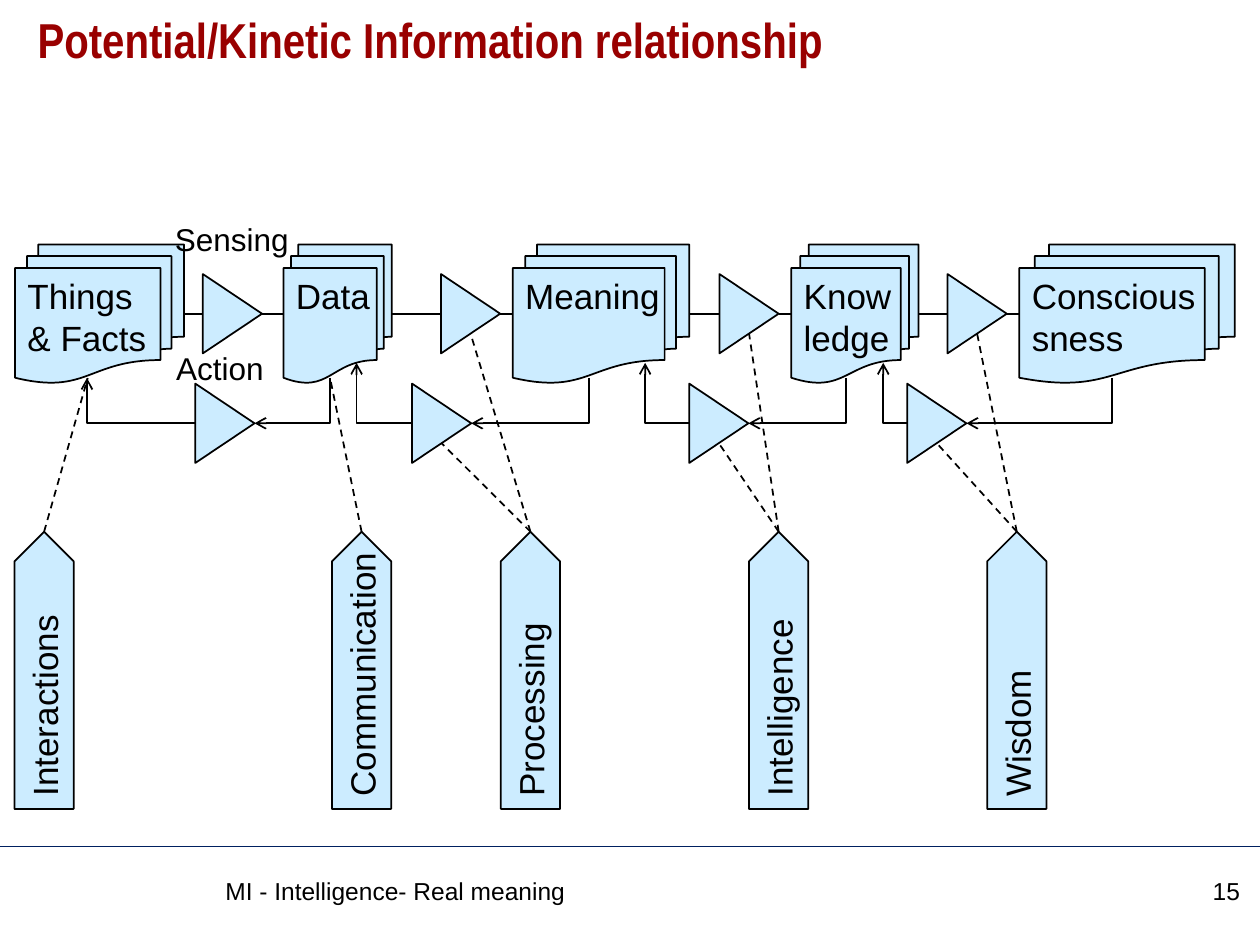
from lxml.etree import SubElement
from pptx import Presentation
from pptx.dml.color import RGBColor
from pptx.enum.dml import MSO_LINE
from pptx.enum.shapes import MSO_CONNECTOR as Connector, MSO_SHAPE as Shape
from pptx.enum.text import MSO_ANCHOR as Anchor, MSO_AUTO_SIZE as AutoSize, PP_ALIGN as Align
from pptx.oxml.ns import qn
from pptx.util import Inches, Pt

BLACK = RGBColor(0x00, 0x00, 0x00)
PALE_BLUE = RGBColor(0xCC, 0xEC, 0xFF)
DARK_RED = RGBColor(0x99, 0x00, 0x00)
NAVY = RGBColor(0x00, 0x20, 0x60)

LABEL = {"name": "Arial", "size": Pt(20), "bold": False}
CAPTION = {"name": "Arial", "size": Pt(18), "bold": False}
FOOTER = {"name": "Arial", "size": Pt(14), "bold": False}
TITLE = {"name": "Arial Narrow", "size": Pt(28), "bold": True}

# Text, left, width
STAGES = [
    ("Things\n& Facts", 0.12, 1.34),
    ("Data", 2.25, 0.86),
    ("Meaning", 4.07, 1.4),
    ("Know\nledge", 6.28, 1.01),
    ("Conscious\nsness", 8.09, 1.71),
]
STAGE_TOP, STAGE_HEIGHT = 1.94, 1.1
STAGE_FOOT = 3.0
FOOT_SHARE = 0.43  # where the wavy foot is met, as a share of the width

# Left of the forward gate, left of the return gate, end point of the return arrow
STEPS = [
    (1.61, 1.55, (0.69, STAGE_FOOT)),
    (3.5, 3.27, (2.83, 2.88)),
    (5.71, 5.47, (5.12, 2.88)),
    (7.52, 7.2, (7.01, 2.88)),
]
GATE_WIDTH, GATE_HEIGHT = 0.47, 0.63
FORWARD_Y, RETURN_Y = 2.49, 3.36

# Text, x of the tip
PLATES = [
    ("Interactions", 0.35),
    ("Communication", 2.87),
    ("Processing", 4.21),
    ("Intelligence", 6.18),
    ("Wisdom", 8.07),
]
PLATE_TOP, PLATE_LENGTH, PLATE_WIDTH = 4.22, 2.2, 0.47


def write(frame, text, style, color=BLACK, align=Align.LEFT, spacing=None):
    for index, line in enumerate(text.split("\n")):
        para = frame.paragraphs[0] if index == 0 else frame.add_paragraph()
        para.alignment = align
        if spacing:
            para.line_spacing = spacing
        span = para.add_run()
        span.text = line
        for key, value in style.items():
            setattr(span.font, key, value)
        span.font.color.rgb = color


def add_text(page, text, left, top, width, height, style, wrap=True, **options):
    box = page.shapes.add_textbox(Inches(left), Inches(top), Inches(width), Inches(height))
    box.text_frame.word_wrap = wrap
    box.text_frame.auto_size = AutoSize.NONE if wrap else AutoSize.SHAPE_TO_FIT_TEXT
    write(box.text_frame, text, style, **options)


def add_block(page, kind, left, top, width, height, text="", anchor=Anchor.TOP, rotation=0):
    block = page.shapes.add_shape(kind, Inches(left), Inches(top), Inches(width), Inches(height))
    block.shadow.inherit = False
    block.fill.solid()
    block.fill.fore_color.rgb = PALE_BLUE
    block.line.color.rgb = BLACK
    block.line.width = Pt(1)
    block.rotation = rotation
    if text:
        block.text_frame.word_wrap = False
        block.text_frame.vertical_anchor = anchor
        write(block.text_frame, text, LABEL)


def add_turned(page, kind, center_x, center_y, length, breadth, rotation, text=""):
    """Add a block turned a quarter about its centre."""
    add_block(page, kind, center_x - length / 2, center_y - breadth / 2, length, breadth,
              text, Anchor.MIDDLE, rotation)


def add_gate(page, left, center_y):
    add_turned(page, Shape.ISOSCELES_TRIANGLE, left + GATE_WIDTH / 2, center_y,
               GATE_HEIGHT, GATE_WIDTH, 90)


def add_line(page, start, end, color=BLACK, width=1, dashed=False, kind=Connector.STRAIGHT):
    line = page.shapes.add_connector(kind, *(Inches(value) for value in (*start, *end)))
    line.line.color.rgb = color
    line.line.width = Pt(width)
    if dashed:
        line.line.dash_style = MSO_LINE.DASH
    SubElement(line._element.spPr, qn("a:effectLst"))
    return line


def add_bent_arrow(page, start, end, down_first):
    """Add a one-corner arrow leading left, either down then left or left then up."""
    width, height = abs(start[0] - end[0]), abs(start[1] - end[1])
    center_x, center_y = (start[0] + end[0]) / 2, (start[1] + end[1]) / 2
    if down_first:
        width, height = height, width
    arrow = add_line(page, (center_x - width / 2, center_y - height / 2),
                     (center_x + width / 2, center_y + height / 2), kind=Connector.ELBOW)
    properties = arrow._element.spPr
    properties.find(qn("a:prstGeom")).set("prst", "bentConnector2")
    properties.find(qn("a:xfrm")).set("rot", str((90 if down_first else 180) * 60000))
    SubElement(properties.find(qn("a:ln")), qn("a:tailEnd"), type="arrow")


def add_step(page, index):
    """Add the gates and the lines that lead from one stage to the next and back."""
    forward, back, head = STEPS[index]
    _, left, width = STAGES[index]
    _, next_left, next_width = STAGES[index + 1]
    add_gate(page, forward, FORWARD_Y)
    add_gate(page, back, RETURN_Y)
    add_line(page, (left + width, FORWARD_Y), (forward, FORWARD_Y))
    add_line(page, (forward + GATE_WIDTH, FORWARD_Y), (next_left, FORWARD_Y))
    add_bent_arrow(page, (next_left + next_width * FOOT_SHARE, STAGE_FOOT),
                   (back + GATE_WIDTH, RETURN_Y), down_first=True)
    add_bent_arrow(page, (back, RETURN_Y), head, down_first=False)


def add_dashes(page, index):
    """Tie a plate to its stage (first two) or to the edges of its two gates."""
    tip = (PLATES[index][1], PLATE_TOP)
    if index < 2:
        _, left, width = STAGES[index]
        targets = [(left + width * FOOT_SHARE, STAGE_FOOT)]
    else:
        forward, back, _ = STEPS[index - 1]
        targets = [(gate + GATE_WIDTH / 2, y + GATE_HEIGHT / 4)
                   for gate, y in ((forward, FORWARD_Y), (back, RETURN_Y))]
    for target in targets:
        add_line(page, tip, target, dashed=True)


def main():
    deck = Presentation()
    deck.slide_width, deck.slide_height = Inches(10), Inches(7.5)
    page = deck.slides.add_slide(deck.slide_layouts[6])

    add_line(page, (0, 6.72), (10, 6.72), NAVY, 0.75)
    add_text(page, "Potential/Kinetic Information relationship", 0.2, 0.08, 9.61, 0.83,
             TITLE, color=DARK_RED, spacing=0.9)
    add_text(page, "MI - Intelligence- Real meaning", 1.69, 6.9, 7.21, 0.45, FOOTER)
    add_text(page, "15", 9.02, 6.9, 0.92, 0.45, FOOTER, align=Align.RIGHT)

    for text, left, width in STAGES:
        add_block(page, Shape.FLOWCHART_MULTIDOCUMENT, left, STAGE_TOP, width, STAGE_HEIGHT, text)
    for text, tip_x in PLATES:
        add_turned(page, Shape.PENTAGON, tip_x, PLATE_TOP + PLATE_LENGTH / 2,
                   PLATE_LENGTH, PLATE_WIDTH, 270, text)
    for index in range(len(STEPS)):
        add_step(page, index)
    for index in range(len(PLATES)):
        add_dashes(page, index)
    add_text(page, "Action", 1.3, 2.72, 0.9, 0.4, CAPTION, wrap=False)
    add_text(page, "Sensing", 1.29, 1.7, 1.11, 0.4, CAPTION, wrap=False)

    deck.save("out.pptx")


if __name__ == "__main__":
    main()
